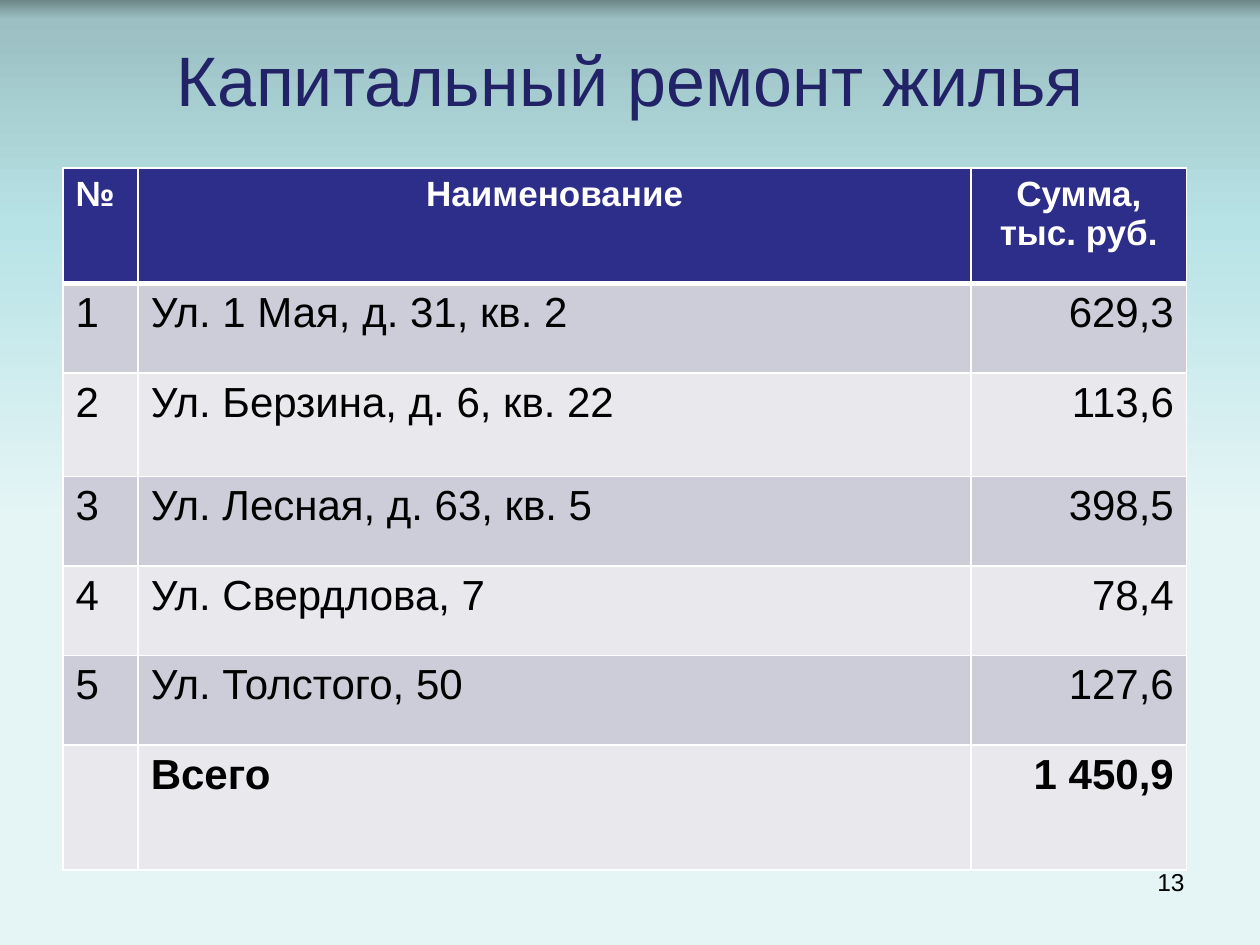
from lxml.etree import SubElement
from pptx import Presentation
from pptx.dml.color import RGBColor
from pptx.enum.text import MSO_ANCHOR as Anchor, PP_ALIGN as Align
from pptx.oxml.ns import qn
from pptx.util import Pt

LEFT, CENTER, RIGHT = Align.LEFT, Align.CENTER, Align.RIGHT


def color(value):
    return RGBColor.from_string(value)


class Slide:
    font_name = "Arial"
    header_fill = "2D2D8A"
    band_fills = ("CDCDDA", "E8E8ED")
    border = "FFFFFF"

    def __init__(self, deck):
        self.page = deck.slides.add_slide(deck.slide_layouts[6])

    def background(self, stops):
        fill = self.page.background.fill
        fill.gradient()
        fill.gradient_angle = 270
        stop_list = self.page.element.xpath(".//a:gsLst")[0]
        for stop in list(stop_list):
            stop_list.remove(stop)
        for percent, value in stops:
            stop = SubElement(stop_list, qn("a:gs"), pos=str(percent * 1000))
            SubElement(stop, qn("a:srgbClr"), val=value)

    def add_words(self, frame, text, align, ink, **formats):
        para = frame.paragraphs[0]
        para.alignment = align
        span = para.add_run()
        span.text = text
        span.font.color.rgb = color(ink)
        for name, value in {"name": self.font_name, **formats}.items():
            setattr(span.font, name, value)

    def text(self, text, place, align, ink, size, anchor=Anchor.TOP):
        box = self.page.shapes.add_textbox(*map(Pt, place))
        frame = box.text_frame
        frame.word_wrap = True
        frame.vertical_anchor = anchor
        self.add_words(frame, text, align, ink, size=Pt(size))

    def edge(self, cell, side, width):
        # Borders must come before the fill in the cell properties
        line = SubElement(cell._tc.get_or_add_tcPr(), qn(f"a:{side}"), w=str(Pt(width)))
        fill = SubElement(line, qn("a:solidFill"))
        SubElement(fill, qn("a:srgbClr"), val=self.border)

    def table(self, rows, place, widths, heights, aligns):
        shape = self.page.shapes.add_table(len(rows), len(widths), *map(Pt, place))
        table = shape.table
        for column, width in zip(table.columns, widths):
            column.width = Pt(width)
        for row, height in zip(table.rows, heights):
            row.height = Pt(height)
        for r, texts in enumerate(rows):
            header, total = r == 0, r == len(rows) - 1
            for c, text in enumerate(texts):
                cell = table.cell(r, c)
                for side in ("lnL", "lnR", "lnT", "lnB"):
                    thick = (header and side == "lnB") or (r == 1 and side == "lnT")
                    self.edge(cell, side, 3 if thick else 1)
                cell.fill.solid()
                cell.fill.fore_color.rgb = color(
                    self.header_fill if header else self.band_fills[(r - 1) % 2])
                if text:
                    self.add_words(cell.text_frame, text,
                                   CENTER if header and c else aligns[c],
                                   "FFFFFF" if header else "000000",
                                   size=Pt(20 if header else 24), bold=header or total)


def main():
    deck = Presentation()
    deck.slide_width, deck.slide_height = Pt(720), Pt(540)
    slide = Slide(deck)

    # Background
    slide.background([(0, "6D8688"), (2, "9BBFC2"), (24, "B8E3E6"), (55, "E5F5F6")])

    # Title
    slide.text("Капитальный ремонт жилья", (36, 18, 648, 54), CENTER, "222267", 40,
               Anchor.MIDDLE)

    # Repair costs
    rows = [
        ("№", "Наименование", "Сумма, тыс. руб."),
        ("1", "Ул. 1 Мая, д. 31, кв. 2", "629,3"),
        ("2", "Ул. Берзина, д. 6, кв. 22", "113,6"),
        ("3", "Ул. Лесная, д. 63, кв. 5", "398,5"),
        ("4", "Ул. Свердлова, 7", "78,4"),
        ("5", "Ул. Толстого, 50", "127,6"),
        ("", "Всего", "1 450,9"),
    ]
    slide.table(rows, (36, 96, 642, 402), (43, 476, 123),
                (66, 51.2, 59, 51.2, 51.2, 51.2, 71.5), (LEFT, LEFT, RIGHT))

    # Page number
    slide.text("13", (516, 492, 168, 37.5), RIGHT, "000000", 14)

    deck.save("out.pptx")


if __name__ == "__main__":
    main()
